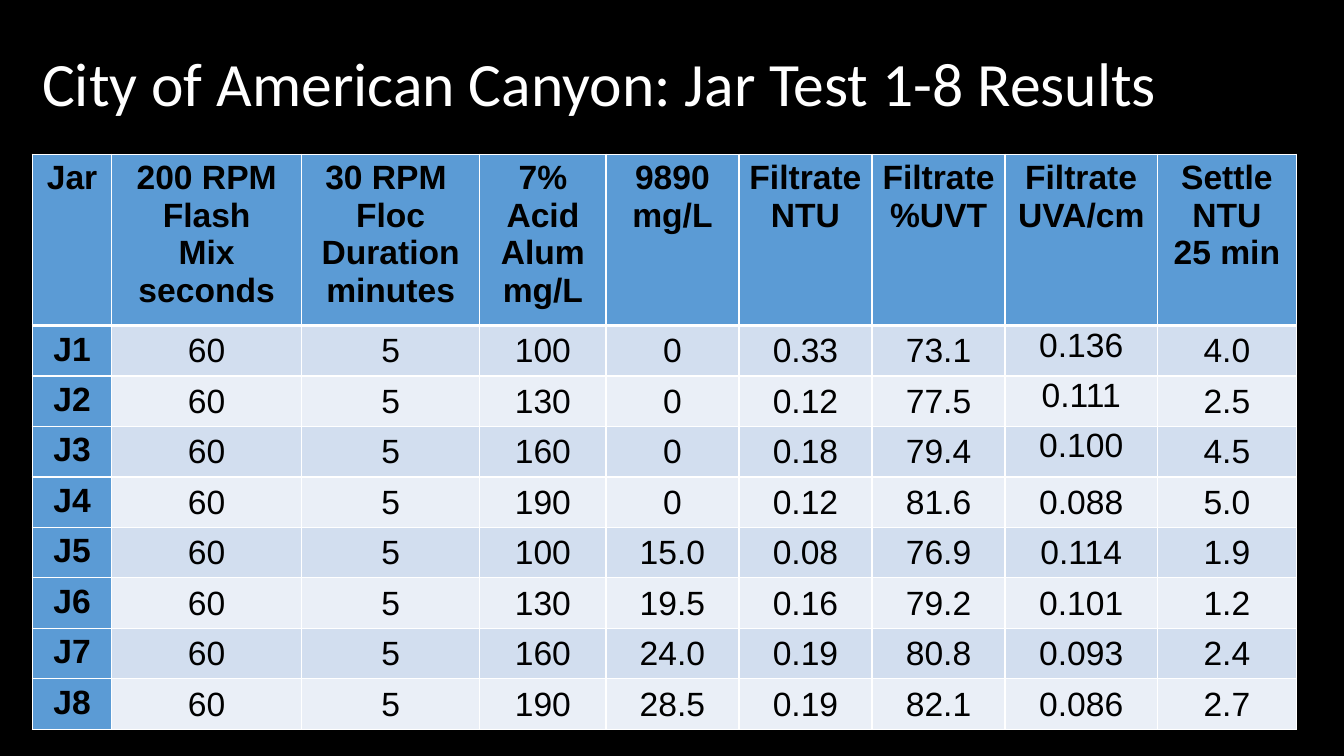
from dataclasses import dataclass

from lxml import etree
from pptx import Presentation
from pptx.dml.color import RGBColor
from pptx.enum.text import MSO_ANCHOR, PP_ALIGN
from pptx.oxml.ns import qn
from pptx.slide import Slide
from pptx.table import _Cell
from pptx.text.text import TextFrame
from pptx.util import Inches, Pt

CENTER = PP_ALIGN.CENTER
LEFT = PP_ALIGN.LEFT
MIDDLE = MSO_ANCHOR.MIDDLE
TOP = MSO_ANCHOR.TOP

BLACK = "000000"
WHITE = "FFFFFF"
HEADER_BLUE = "5B9BD5"
BAND_COLORS = ("D2DEEF", "EAEFF7")

THIN_BORDER = 1
THICK_BORDER = 3
ROW_HEIGHT = 0.41
VALUE_MARGINS = {
    "margin_left": Inches(0.01),
    "margin_right": Inches(0.01),
    "margin_top": Inches(0.01),
    "margin_bottom": Inches(0),
}


@dataclass(frozen=True)
class Column:
    heading: str
    width: float
    values: tuple[str, ...]


@dataclass(frozen=True)
class TextStyle:
    font: str
    size: float
    color: str
    bold: bool = False
    alignment: PP_ALIGN = CENTER
    line_spacing: float = 1.0


TITLE_STYLE = TextStyle("Calibri", 44, WHITE, alignment=LEFT, line_spacing=0.9)
HEADING_STYLE = TextStyle("Arial", 24, BLACK, bold=True)
VALUE_STYLE = TextStyle("Arial", 24, BLACK)

JAR_COUNT = 8
UVA_HEADING = "Filtrate\nUVA/cm"
TOP_ALIGNED_UVA_ROWS = (1, 2, 3)
ALUM_DOSES = ("100", "130", "160", "190")

COLUMNS = (
    Column("Jar", 0.79, tuple(f"J{jar}" for jar in range(1, JAR_COUNT + 1))),
    Column("200 RPM\nFlash\nMix\nseconds", 1.88, ("60",) * JAR_COUNT),
    Column("30 RPM \nFloc\nDuration\nminutes", 1.77, ("5",) * JAR_COUNT),
    Column("7% Acid Alum\nmg/L", 1.25, ALUM_DOSES * 2),
    Column("9890\nmg/L", 1.32, ("0",) * 4 + ("15.0", "19.5", "24.0", "28.5")),
    Column("Filtrate\nNTU", 1.32,
           ("0.33", "0.12", "0.18", "0.12", "0.08", "0.16", "0.19", "0.19")),
    Column("Filtrate\n%UVT", 1.32,
           ("73.1", "77.5", "79.4", "81.6", "76.9", "79.2", "80.8", "82.1")),
    Column(UVA_HEADING, 1.51,
           ("0.136", "0.111", "0.100", "0.088", "0.114", "0.101", "0.093", "0.086")),
    Column("Settle\nNTU\n25 min", 1.38,
           ("4.0", "2.5", "4.5", "5.0", "1.9", "1.2", "2.4", "2.7")),
)


def rgb(color: str) -> RGBColor:
    return RGBColor.from_string(color)


def write_text(text_frame: TextFrame, text: str, style: TextStyle) -> None:
    font_values = {"name": style.font, "size": Pt(style.size), "bold": style.bold}
    for index, line in enumerate(text.split("\n")):
        paragraph = text_frame.add_paragraph() if index else text_frame.paragraphs[0]
        paragraph.alignment = style.alignment
        paragraph.line_spacing = style.line_spacing
        run = paragraph.add_run()
        run.text = line
        for name, value in font_values.items():
            setattr(run.font, name, value)
        run.font.color.rgb = rgb(style.color)


def add_borders(cell: _Cell, top: float, bottom: float) -> None:
    properties = cell._tc.get_or_add_tcPr()
    widths = {"lnL": THIN_BORDER, "lnR": THIN_BORDER, "lnT": top, "lnB": bottom}
    for tag, width in widths.items():
        line = etree.SubElement(properties, qn(f"a:{tag}"), w=str(Pt(width)))
        fill = etree.SubElement(line, qn("a:solidFill"))
        etree.SubElement(fill, qn("a:srgbClr"), val=WHITE)


def format_cell(cell: _Cell, row: int, column: int) -> None:
    is_heading = row == 0 or column == 0
    add_borders(
        cell,
        top=THICK_BORDER if row == 1 else THIN_BORDER,
        bottom=THICK_BORDER if row == 0 else THIN_BORDER,
    )
    cell.fill.solid()
    cell.fill.fore_color.rgb = rgb(
        HEADER_BLUE if is_heading else BAND_COLORS[(row - 1) % 2]
    )
    if not is_heading:
        is_top_aligned = (
            COLUMNS[column].heading == UVA_HEADING and row in TOP_ALIGNED_UVA_ROWS
        )
        cell.vertical_anchor = TOP if is_top_aligned else MIDDLE
        for name, value in VALUE_MARGINS.items():
            setattr(cell, name, value)
    definition = COLUMNS[column]
    text = (definition.heading, *definition.values)[row]
    write_text(cell.text_frame, text, HEADING_STYLE if is_heading else VALUE_STYLE)


def add_title(slide: Slide) -> None:
    title = slide.shapes.add_textbox(
        Inches(0.32), Inches(0.13), Inches(12.1), Inches(1.45)
    )
    title.text_frame.word_wrap = True
    title.text_frame.vertical_anchor = MIDDLE
    write_text(
        title.text_frame, "City of American Canyon: Jar Test 1-8 Results", TITLE_STYLE
    )


def add_results_table(slide: Slide) -> None:
    height = Inches(5.7)
    frame = slide.shapes.add_table(
        JAR_COUNT + 1, len(COLUMNS), Inches(0.32), Inches(1.53), Inches(12.54), height
    )
    table = frame.table
    for table_column, definition in zip(table.columns, COLUMNS):
        table_column.width = Inches(definition.width)
    for row_index, table_row in enumerate(table.rows):
        table_row.height = Inches(ROW_HEIGHT)
        for column_index, cell in enumerate(table_row.cells):
            format_cell(cell, row_index, column_index)
    frame.height = height


def main() -> None:
    presentation = Presentation()
    presentation.slide_width = Inches(13.33)
    presentation.slide_height = Inches(7.5)
    slide = presentation.slides.add_slide(presentation.slide_layouts[6])
    slide.background.fill.solid()
    slide.background.fill.fore_color.rgb = rgb(BLACK)
    add_title(slide)
    add_results_table(slide)
    presentation.save("out.pptx")


if __name__ == "__main__":
    main()
